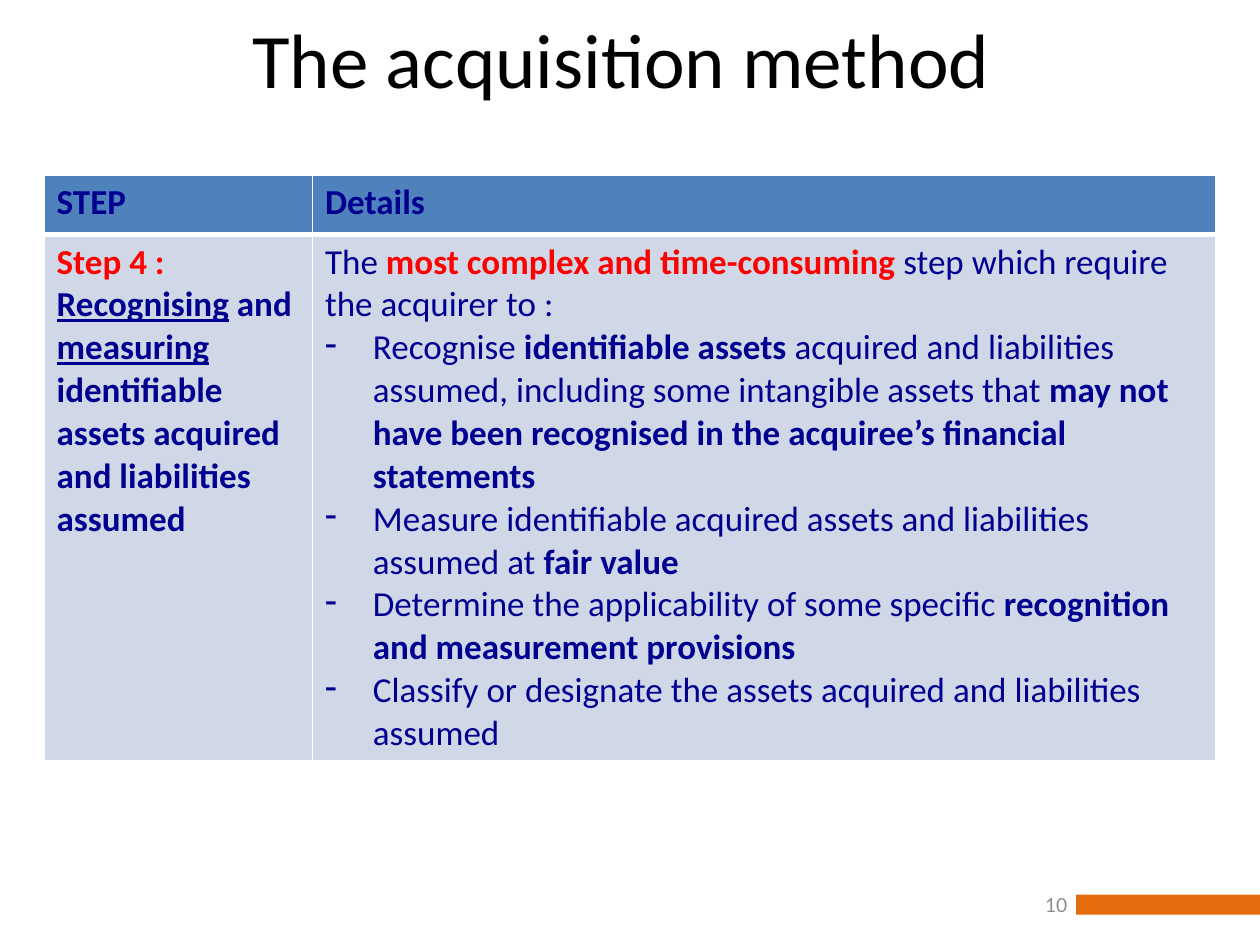
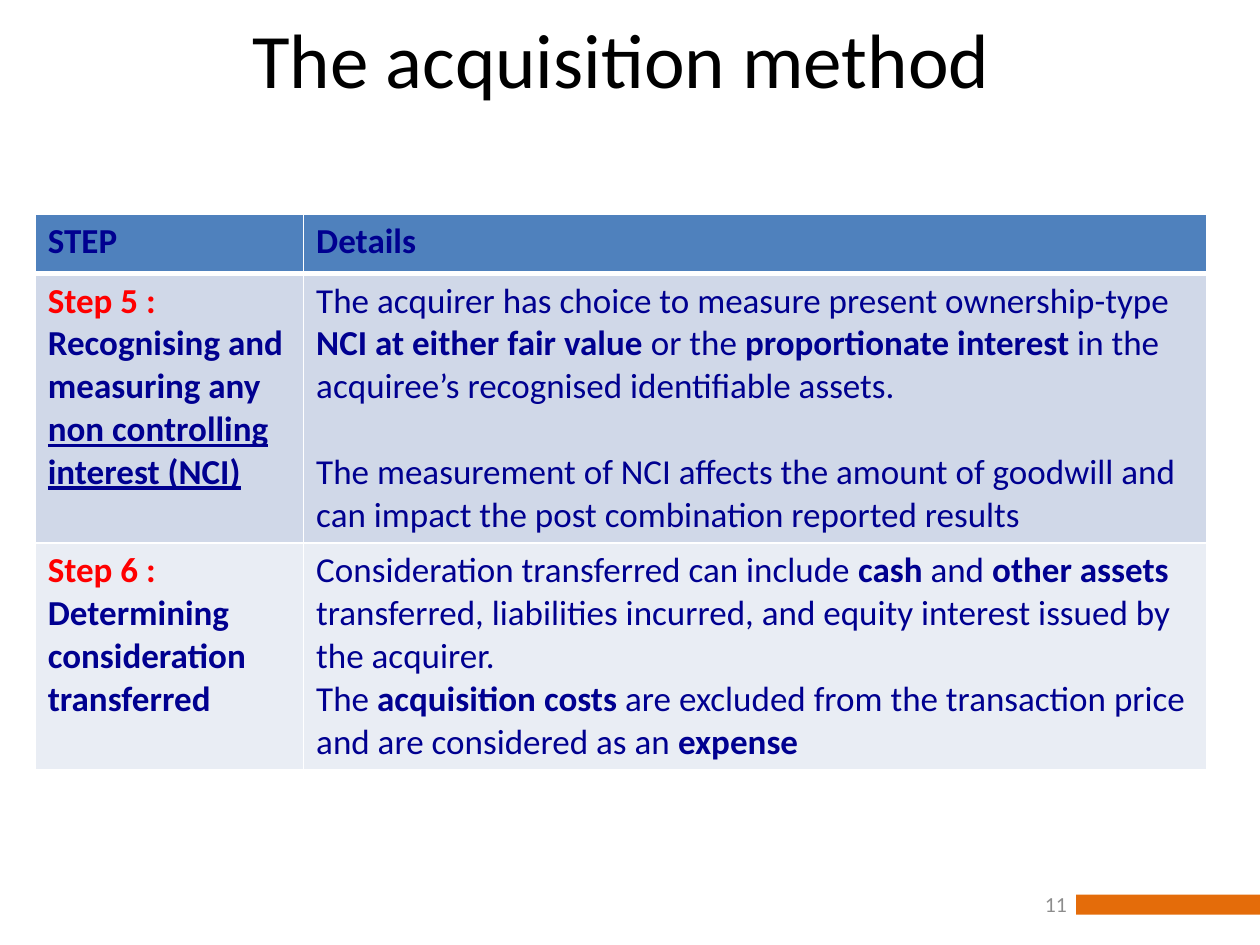
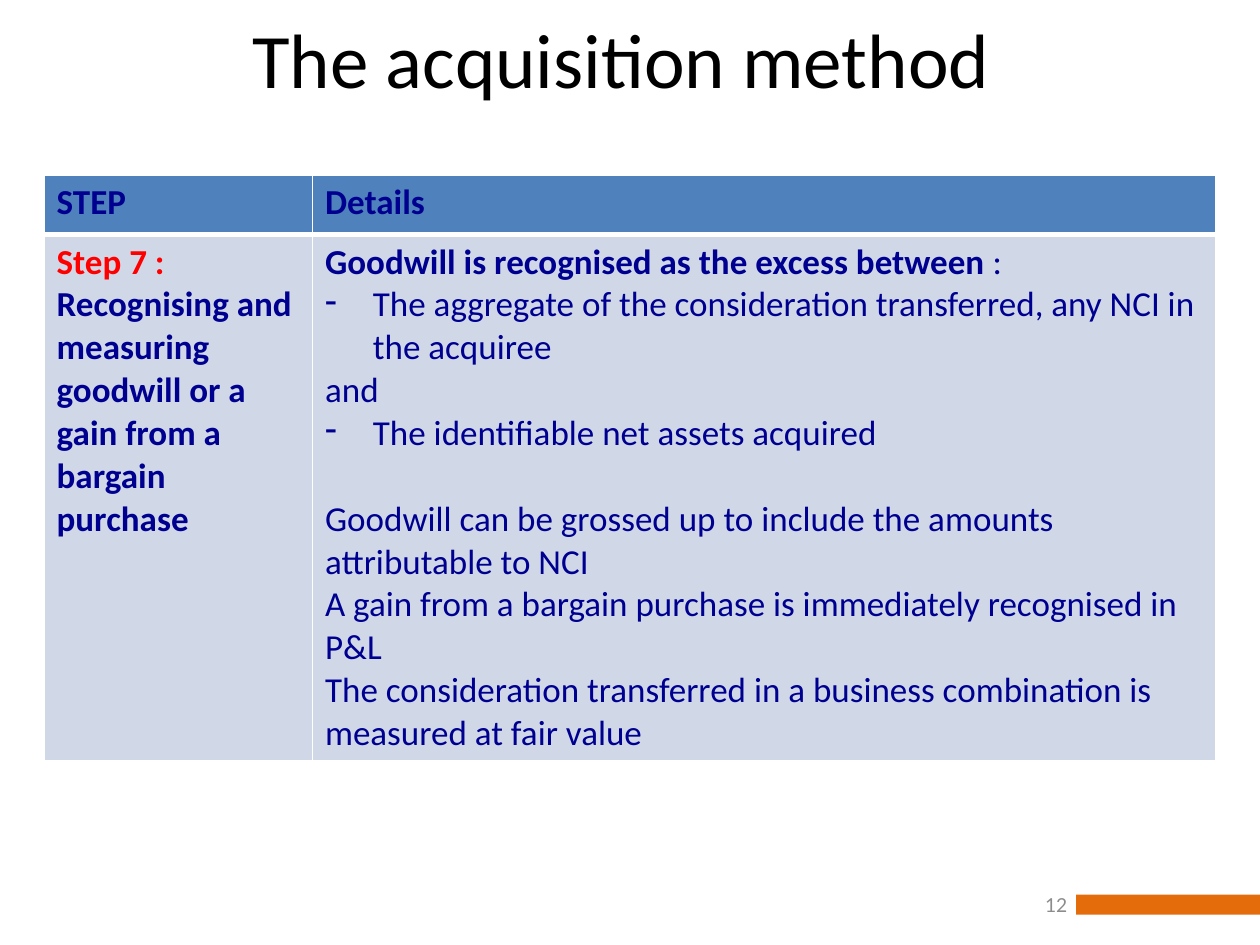
from lxml import etree
from pptx import Presentation
from pptx.dml.color import RGBColor
from pptx.enum.shapes import MSO_SHAPE as Shape
from pptx.enum.text import MSO_ANCHOR as Anchor, PP_ALIGN as Align
from pptx.oxml.ns import qn
from pptx.util import Inches, Pt

BOLD, RED, UNDERLINE = "bold", "red", "underline"
TITLE = "The acquisition method "
HEADINGS = ("STEP", "Details")
COLUMN_WIDTHS = (2.13, 7.17)
HEADER_HEIGHT = 0.47


def color(value):
    return RGBColor.from_string(value)


def line(*spans, bullet=False, gap=False):
    """Describe a paragraph; each span is a text or a (text, style, ...) tuple."""
    return spans, bullet, gap


def step(number, *spans):
    """Step label and name sharing one paragraph."""
    return [line((f"Step {number} : ", BOLD, RED), *spans)]


def split_step(number, *spans):
    """Step label and name in two paragraphs."""
    return [line((f"Step {number} :", BOLD, RED)), line(*spans)]


class Deck:
    FONT = "Calibri"
    NUMBER_FONT = "Lato"
    BLACK, WHITE, GREY = "000000", "FFFFFF", "8C8C8C"
    ORANGE, NAVY, RED = "E46C0A", "000090", "FF0000"
    HEADER_FILL = "4F81BD"
    ROW_FILLS = ("D0D8E8", "E9EDF4")
    TEXT_SIZE = 20
    LINE_HEIGHT = 24.5
    INDENT = 0.38

    def __init__(self):
        self.deck = Presentation()
        self.deck.slide_width = Inches(10)
        self.deck.slide_height = Inches(7.5)
        self.slide = None

    def add_page(self, number):
        self.slide = self.deck.slides.add_slide(self.deck.slide_layouts[6])
        self.add_bar()
        title = self.add_text(TITLE, (0, 0, 10, 1.06), self.FONT, 44, self.BLACK, Align.CENTER)
        title.margin_top = Inches(0.09)
        footer = self.add_text(str(number), (6.24, 6.98, 2.33, 0.4),
                               self.NUMBER_FONT, 11, self.GREY, Align.RIGHT)
        footer.vertical_anchor = Anchor.MIDDLE

    def add_bar(self):
        bar = self.slide.shapes.add_shape(
            Shape.RECTANGLE, Inches(8.54), Inches(7.1), Inches(1.46), Inches(0.16))
        bar.shadow.inherit = False
        bar.fill.solid()
        bar.fill.fore_color.rgb = color(self.ORANGE)
        bar.line.fill.background()

    def add_text(self, text, place, font, size, hue, align):
        box = self.slide.shapes.add_textbox(*map(Inches, place))
        frame = box.text_frame
        frame.word_wrap = True
        frame.text = text
        para = frame.paragraphs[0]
        para.alignment = align
        self.style(para.runs[0].font, font, size, hue)
        return frame

    def style(self, font, name, size, hue):
        font.name = name
        font.size = Pt(size)
        font.color.rgb = color(hue)

    def add_steps(self, left, top, steps):
        """Add the table; each step is (row height, name lines, detail lines)."""
        height = HEADER_HEIGHT + sum(row[0] for row in steps)
        table = self.slide.shapes.add_table(
            len(steps) + 1, len(HEADINGS), Inches(left), Inches(top),
            Inches(sum(COLUMN_WIDTHS)), Inches(height)).table
        for column, width in zip(table.columns, COLUMN_WIDTHS):
            column.width = Inches(width)
        header = (HEADER_HEIGHT, *([line((text, BOLD))] for text in HEADINGS))
        for index, (row_height, *contents) in enumerate([header, *steps]):
            table.rows[index].height = Inches(row_height)
            fill = self.ROW_FILLS[(index - 1) % 2] if index else self.HEADER_FILL
            for cell, lines in zip(table.rows[index].cells, contents):
                self.fill_cell(cell, lines, fill)
                self.add_borders(cell, is_header=index == 0)

    def fill_cell(self, cell, lines, fill):
        cell.fill.solid()
        cell.fill.fore_color.rgb = color(fill)
        frame = cell.text_frame
        for index, (spans, bullet, gap) in enumerate(lines):
            para = frame.add_paragraph() if index else frame.paragraphs[0]
            if bullet:
                self.add_bullet(para)
            if gap:
                para.space_before = Pt(self.LINE_HEIGHT)
            for span in spans:
                self.add_span(para, span)

    def add_span(self, para, span):
        text, *styles = (span,) if isinstance(span, str) else span
        run = para.add_run()
        run.text = text
        self.style(run.font, self.FONT, self.TEXT_SIZE, self.RED if RED in styles else self.NAVY)
        run.font.bold = BOLD in styles
        run.font.underline = UNDERLINE in styles

    def add_bullet(self, para):
        properties = para._p.get_or_add_pPr()
        properties.set("marL", str(Inches(self.INDENT)))
        properties.set("indent", str(-Inches(self.INDENT)))
        etree.SubElement(properties, qn("a:buChar")).set("char", "-")

    def add_borders(self, cell, is_header):
        widths = {"a:lnL": 1, "a:lnR": 1, "a:lnB": 3 if is_header else 1}
        if is_header:
            widths["a:lnT"] = 1
        properties = cell._tc.get_or_add_tcPr()
        order = [tag for tag in ("a:lnL", "a:lnR", "a:lnT", "a:lnB") if tag in widths]
        for position, tag in enumerate(order):
            border = etree.Element(qn(tag), w=str(Pt(widths[tag])))
            fill = etree.SubElement(border, qn("a:solidFill"))
            etree.SubElement(fill, qn("a:srgbClr")).set("val", self.WHITE)
            properties.insert(position, border)

    def save(self):
        self.deck.save("out.pptx")


RECOGNISE_ASSETS = (
    4.18,
    step(4, ("Recognising", BOLD, UNDERLINE), (" and ", BOLD), ("measuring", BOLD, UNDERLINE),
         (" identifiable assets acquired and liabilities assumed", BOLD)),
    [line("The ", ("most complex and time-consuming", BOLD, RED),
          " step which require the acquirer to :"),
     line("Recognise ", ("identifiable assets ", BOLD),
          "acquired and liabilities assumed, including some intangible assets that",
          (" may not have been recognised in the acquiree’s financial statements", BOLD),
          bullet=True),
     line("Measure identifiable acquired assets and liabilities assumed at ",
          ("fair value", BOLD), bullet=True),
     line("Determine the applicability of some specific ",
          ("recognition and measurement provisions", BOLD), bullet=True),
     line("Classify or designate the assets acquired and liabilities assumed", bullet=True)],
)
RECOGNISE_NCI = (
    2.14,
    split_step(5, ("Recognising and measuring any ", BOLD),
               ("non controlling interest (NCI)", BOLD, UNDERLINE)),
    [line("The acquirer has choice to measure present ownership-type ",
          ("NCI at either fair value", BOLD), " or the ", ("proportionate interest", BOLD),
          " in the acquiree’s recognised identifiable assets."),
     line("The measurement of NCI affects the amount of goodwill and can impact "
          "the post combination reported results", gap=True)],
)
DETERMINE_CONSIDERATION = (
    1.8,
    split_step(6, ("Determining consideration transferred", BOLD)),
    [line("Consideration transferred can include ", ("cash", BOLD), " and ",
          ("other assets", BOLD), " transferred, liabilities incurred, and equity interest "
          "issued by the acquirer."),
     line("The ", ("acquisition costs ", BOLD),
          "are excluded from the transaction price and are considered as an ",
          ("expense", BOLD))],
)
RECOGNISE_GOODWILL = (
    4.18,
    step(7, ("Recognising and measuring goodwill or a gain from a bargain purchase", BOLD)),
    [line(("Goodwill is recognised as the excess between ", BOLD), ":"),
     line("The aggregate of the consideration transferred, any NCI in the acquiree", bullet=True),
     line("and"),
     line("The identifiable net assets acquired", bullet=True),
     line("Goodwill can be grossed up to include the amounts attributable to NCI", gap=True),
     line("A gain from a bargain purchase is immediately recognised in P&L"),
     line("The consideration transferred in a business combination is measured at fair value")],
)
PAGES = (
    (0.35, 1.39, [RECOGNISE_ASSETS]),
    (0.28, 1.7, [RECOGNISE_NCI, DETERMINE_CONSIDERATION]),
    (0.35, 1.39, [RECOGNISE_GOODWILL]),
)


def main():
    deck = Deck()
    for number, (left, top, steps) in enumerate(PAGES, start=10):
        deck.add_page(number)
        deck.add_steps(left, top, steps)
    deck.save()


if __name__ == "__main__":
    main()
